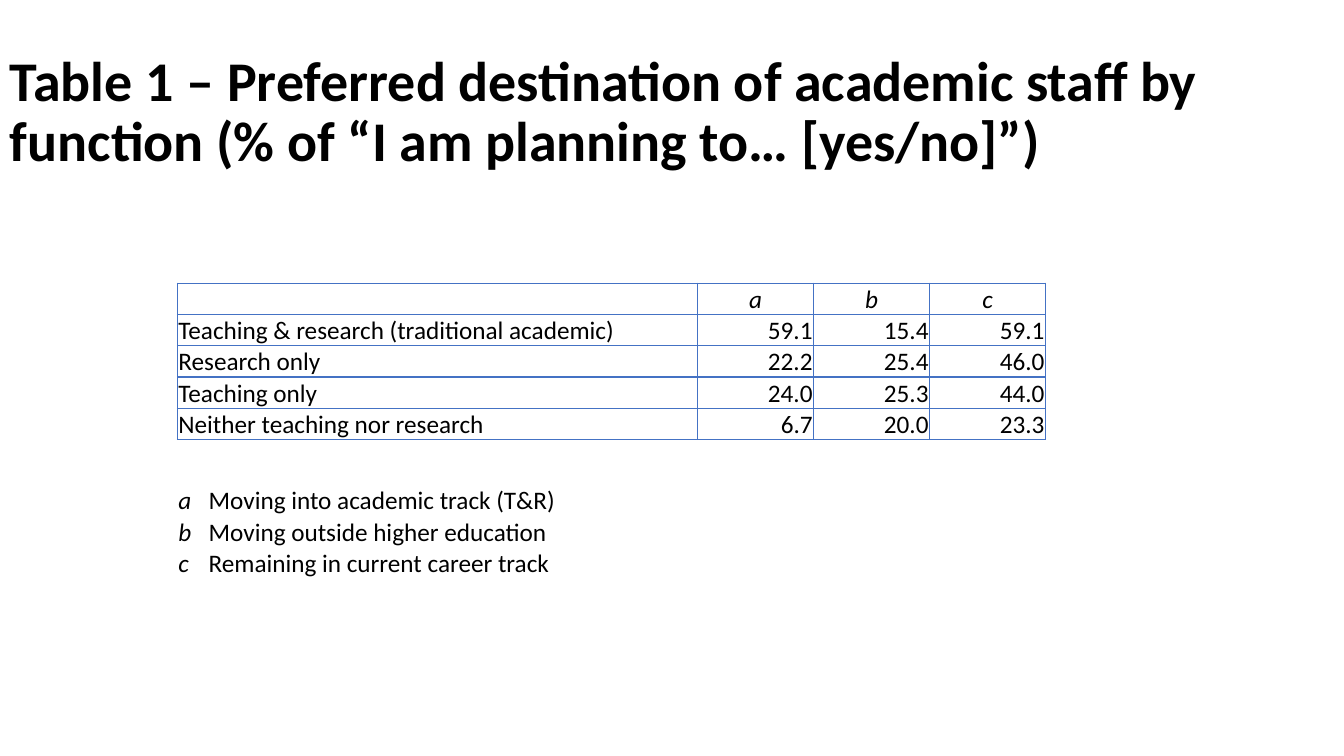
"""Build the slide on preferred destinations of academic staff by function."""
from dataclasses import dataclass

from lxml.etree import SubElement
from pptx import Presentation
from pptx.dml.color import RGBColor
from pptx.enum.text import MSO_ANCHOR, PP_ALIGN
from pptx.oxml.ns import qn
from pptx.util import Inches, Pt

TITLE = ("Table 1 – Preferred destination of academic staff by function "
         "(% of “I am planning to… [yes/no]”)")
DESTINATIONS = [
    ["", "a", "b", "c"],
    ["Teaching & research (traditional academic)", "59.1", "15.4", "59.1"],
    ["Research only", "22.2", "25.4", "46.0"],
    ["Teaching only", "24.0", "25.3", "44.0"],
    ["Neither teaching nor research", "6.7", "20.0", "23.3"],
]
LEGEND = [
    ["a", "Moving into academic track (T&R)"],
    ["b", "Moving outside higher education"],
    ["c", "Remaining in current career track"],
]


@dataclass(frozen=True)
class Theme:
    font: str = "Calibri"
    text: str = "000000"
    border: str = "4472C4"
    border_width: int = Pt(1)
    title_size: int = Pt(40)
    table_size: int = Pt(18)


THEME = Theme()
TABLE_LEFT = 1.76
ROW_HEIGHT = 0.31
CELL_INSET = Inches(0.01)


def style_font(font, size, bold=False, italic=False):
    font.name = THEME.font
    font.size = size
    font.bold = bold
    font.italic = italic
    font.color.rgb = RGBColor.from_string(THEME.text)


def add_title(slide, width):
    box = slide.shapes.add_textbox(0, Inches(0.4), width, Inches(1.45))
    frame = box.text_frame
    frame.word_wrap = True
    frame.vertical_anchor = MSO_ANCHOR.MIDDLE
    paragraph = frame.paragraphs[0]
    paragraph.text = TITLE
    paragraph.line_spacing = 0.9
    style_font(paragraph.font, THEME.title_size, bold=True)


def add_borders(cell):
    properties = cell._tc.get_or_add_tcPr()
    for position, side in enumerate(("lnL", "lnR", "lnT", "lnB")):
        line = properties.makeelement(qn(f"a:{side}"), {"w": str(THEME.border_width)})
        fill = SubElement(line, qn("a:solidFill"))
        SubElement(fill, qn("a:srgbClr"), val=THEME.border)
        properties.insert(position, line)


def add_grid(slide, rows, top, column_widths, bordered):
    frame = slide.shapes.add_table(
        len(rows), len(column_widths), Inches(TABLE_LEFT), Inches(top),
        Inches(sum(column_widths)), Inches(ROW_HEIGHT * len(rows)))
    table = frame.table
    table.first_row = False
    table.horz_banding = False
    for column, width in zip(table.columns, column_widths):
        column.width = Inches(width)
    for row, values in zip(table.rows, rows):
        row.height = Inches(ROW_HEIGHT)
        for cell, value in zip(row.cells, values):
            cell.fill.background()
            cell.margin_left = cell.margin_right = cell.margin_top = CELL_INSET
            cell.margin_bottom = 0
            cell.vertical_anchor = MSO_ANCHOR.BOTTOM
            paragraph = cell.text_frame.paragraphs[0]
            paragraph.text = value
            style_font(paragraph.font, THEME.table_size, italic=len(value) == 1)
            if bordered:
                add_borders(cell)
    return table


def align_destinations(table):
    for row_index, row in enumerate(table.rows):
        for cell in list(row.cells)[1:]:
            alignment = PP_ALIGN.RIGHT if row_index else PP_ALIGN.CENTER
            cell.text_frame.paragraphs[0].alignment = alignment


def main():
    presentation = Presentation()
    presentation.slide_width = Inches(13.33)
    presentation.slide_height = Inches(7.5)
    slide = presentation.slides.add_slide(presentation.slide_layouts[6])
    add_title(slide, presentation.slide_width)
    destinations = add_grid(slide, DESTINATIONS, 2.81, [5.16, 1.15, 1.15, 1.15], True)
    align_destinations(destinations)
    add_grid(slide, LEGEND, 4.81, [0.3, 7.63], False)
    presentation.save("out.pptx")


if __name__ == "__main__":
    main()
